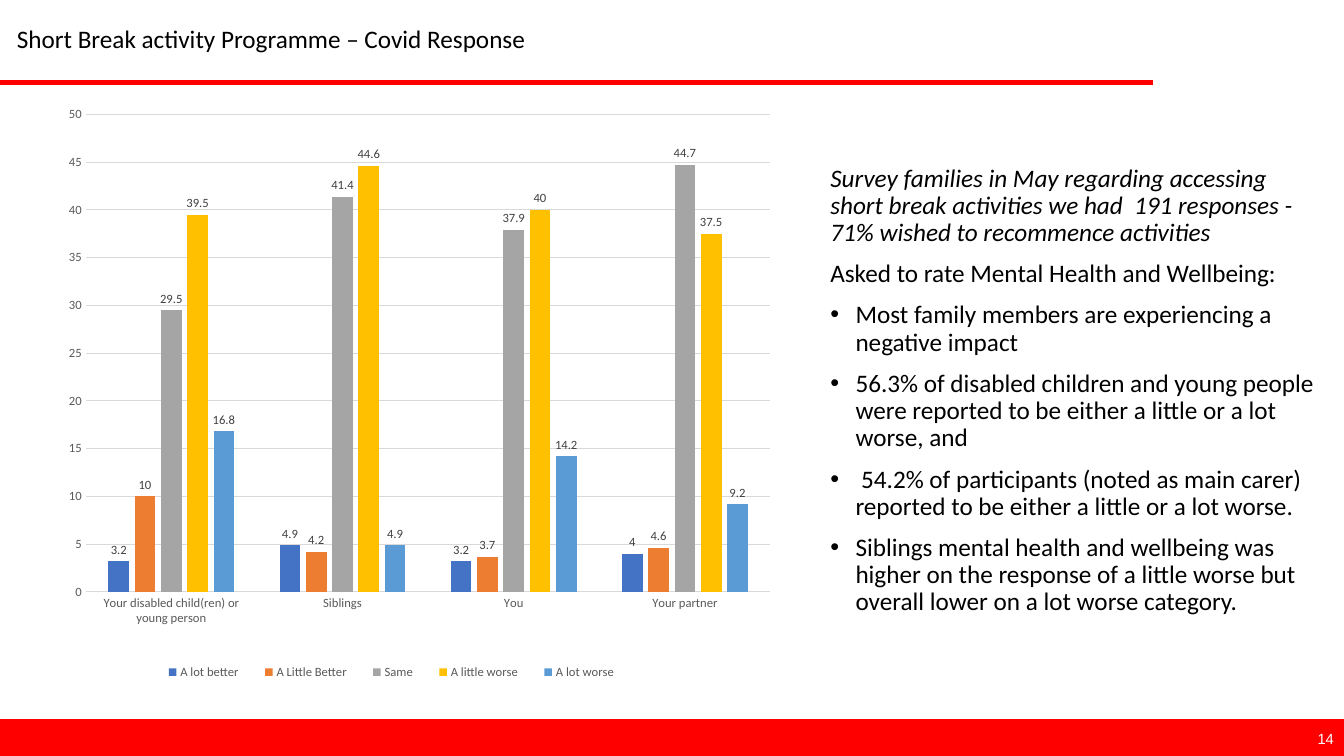
from dataclasses import dataclass

from lxml import etree
from pptx import Presentation
from pptx.chart.data import CategoryChartData
from pptx.dml.color import RGBColor
from pptx.enum.chart import XL_CHART_TYPE, XL_LABEL_POSITION, XL_LEGEND_POSITION, XL_TICK_MARK
from pptx.enum.shapes import MSO_CONNECTOR, MSO_SHAPE
from pptx.enum.text import MSO_ANCHOR, PP_ALIGN
from pptx.oxml import parse_xml
from pptx.oxml.ns import nsdecls, qn
from pptx.util import Pt

CLUSTERED = XL_CHART_TYPE.COLUMN_CLUSTERED
OUTSIDE_END = XL_LABEL_POSITION.OUTSIDE_END
BOTTOM = XL_LEGEND_POSITION.BOTTOM
NO_TICK = XL_TICK_MARK.NONE
STRAIGHT = MSO_CONNECTOR.STRAIGHT
RECTANGLE = MSO_SHAPE.RECTANGLE
TOP, MIDDLE = MSO_ANCHOR.TOP, MSO_ANCHOR.MIDDLE
LEFT, RIGHT = PP_ALIGN.LEFT, PP_ALIGN.RIGHT

COLORS = {
    "red": "FF0000", "black": "000000", "white": "FFFFFF",
    "axis text": "595959", "label text": "404040", "grid": "D9D9D9",
    "blue": "4472C4", "orange": "ED7D31", "gray": "A5A5A5",
    "gold": "FFC000", "light blue": "5B9BD5",
}


@dataclass
class Para:
    text: str
    italic: bool = False
    bullet: bool = False


@dataclass
class Rating:
    name: str
    values: tuple[float, ...]
    color: str


TITLE = [Para("Short Break activity Programme – Covid Response")]
FINDINGS = [
    Para("Survey families in May regarding accessing short break activities we had  191 responses - "
         "71% wished to recommence activities", italic=True),
    Para("Asked to rate Mental Health and Wellbeing:"),
    Para("Most family members are experiencing a negative impact", bullet=True),
    Para("56.3% of disabled children and young people were reported to be either a little "
         "or a lot worse, and", bullet=True),
    Para(" 54.2% of participants (noted as main carer) reported to be either a little "
         "or a lot worse.", bullet=True),
    Para("Siblings mental health and wellbeing was higher on the response of a little worse "
         "but overall lower on a lot worse category.", bullet=True),
]
PEOPLE = ["Your disabled child(ren) or young person", "Siblings", "You", "Your partner"]
RATINGS = [
    Rating("A lot better", (3.2, 4.9, 3.2, 4), "blue"),
    Rating("A Little Better", (10, 4.2, 3.7, 4.6), "orange"),
    Rating("Same", (29.5, 41.4, 37.9, 44.7), "gray"),
    Rating("A little worse", (39.5, 44.6, 40, 37.5), "gold"),
    Rating("A lot worse", (16.8, 4.9, 14.2, 9.2), "light blue"),
]


def rgb(name: str) -> RGBColor:
    return RGBColor.from_string(COLORS[name])


def style_font(font, size: float, color: str, name: str = "Calibri") -> None:
    font.size, font.name = Pt(size), name
    font.color.rgb = rgb(color)


def style_line(line, color: str, width: float) -> None:
    line.color.rgb = rgb(color)
    line.width = Pt(width)


def add_bullet(p) -> None:
    pPr = p._p.get_or_add_pPr()
    pPr.set("marL", str(Pt(18)))
    pPr.set("indent", str(-Pt(18)))
    etree.SubElement(pPr, qn("a:buFont")).set("typeface", "Arial")
    etree.SubElement(pPr, qn("a:buChar")).set("char", "•")


def add_text(slide, box: tuple[float, ...], paras: list[Para], size: float = 18,
             color: str = "black", font: str = "Calibri", align=LEFT, anchor=TOP,
             spacing: float = 0.9) -> None:
    tf = slide.shapes.add_textbox(*map(Pt, box)).text_frame
    tf.word_wrap = True
    tf.vertical_anchor = anchor
    for i, para in enumerate(paras):
        p = tf.add_paragraph() if i else tf.paragraphs[0]
        p.text = para.text
        p.alignment = align
        p.line_spacing = spacing
        if i:
            p.space_before = Pt(10)
        if para.bullet:
            add_bullet(p)
        r = p.runs[0]
        style_font(r.font, size, color, font)
        r.font.italic = para.italic


def manual_layout(x: float, y: float, w: float, h: float, inner: bool = False):
    """Return a chart layout element, in fractions of the chart."""
    target = '<c:layoutTarget val="inner"/>' if inner else ""
    return parse_xml(
        f'<c:layout {nsdecls("c")}><c:manualLayout>{target}'
        '<c:xMode val="edge"/><c:yMode val="edge"/>'
        f'<c:x val="{x}"/><c:y val="{y}"/><c:w val="{w}"/><c:h val="{h}"/>'
        '</c:manualLayout></c:layout>')


def place_plot_and_legend(chart) -> None:
    plot_area = chart._chartSpace.chart.plotArea
    legend = chart.legend._element
    for parent in (plot_area, legend):
        for old in parent.findall(qn("c:layout")):
            parent.remove(old)
    plot_area.insert(0, manual_layout(0.068, 0.036, 0.923, 0.757, inner=True))
    legend.find(qn("c:legendPos")).addnext(manual_layout(0.15, 0.9, 0.66, 0.04))


def add_ratings_chart(slide) -> None:
    data = CategoryChartData()
    data.categories = PEOPLE
    for rating in RATINGS:
        data.add_series(rating.name, rating.values)
    chart = slide.shapes.add_chart(CLUSTERED, Pt(25.2), Pt(65.5), Pt(530), Pt(450.7), data).chart
    chart.has_title = False
    style_font(chart.font, 10, "black")

    chart.has_legend = True
    chart.legend.position = BOTTOM
    chart.legend.include_in_layout = False
    style_font(chart.legend.font, 9, "axis text")

    for axis in (chart.category_axis, chart.value_axis):
        axis.major_tick_mark = axis.minor_tick_mark = NO_TICK
        style_font(axis.tick_labels.font, 9, "axis text")
    style_line(chart.category_axis.format.line, "grid", 0.75)
    values = chart.value_axis
    values.minimum_scale, values.maximum_scale, values.major_unit = 0, 50, 5
    values.format.line.fill.background()
    style_line(values.major_gridlines.format.line, "grid", 0.75)

    plot = chart.plots[0]
    plot.vary_by_categories = False
    plot.gap_width, plot.overlap = 219, -27
    for series, rating in zip(plot.series, RATINGS):
        series.format.fill.solid()
        series.format.fill.fore_color.rgb = rgb(rating.color)
        series.invert_if_negative = False
        labels = series.data_labels
        labels.show_value = True
        labels.position = OUTSIDE_END
        style_font(labels.font, 9, "label text")
    place_plot_and_legend(chart)


def add_red_bands(slide) -> None:
    footer = slide.shapes.add_shape(RECTANGLE, 0, Pt(514), Pt(960), Pt(26))
    footer.shadow.inherit = False
    footer.fill.solid()
    footer.fill.fore_color.rgb = rgb("red")
    style_line(footer.line, "red", 1)
    rule = slide.shapes.add_connector(STRAIGHT, 0, Pt(59), Pt(823.5), Pt(59))
    style_line(rule.line, "red", 3)
    etree.SubElement(rule._element.spPr, qn("a:effectLst"))


def main() -> None:
    prs = Presentation()
    prs.slide_width, prs.slide_height = Pt(960), Pt(540)
    slide = prs.slides.add_slide(prs.slide_layouts[6])
    add_red_bands(slide)
    add_text(slide, (586, 114.5, 366.5, 381), FINDINGS)
    add_ratings_chart(slide)
    add_text(slide, (5, 10.8, 828, 35.3), TITLE, anchor=MIDDLE)
    add_text(slide, (743.8, 517.7, 216, 15.8), [Para("14")], size=10.5, color="white",
             font="Arial", align=RIGHT, spacing=1)
    prs.save("out.pptx")


if __name__ == "__main__":
    main()
